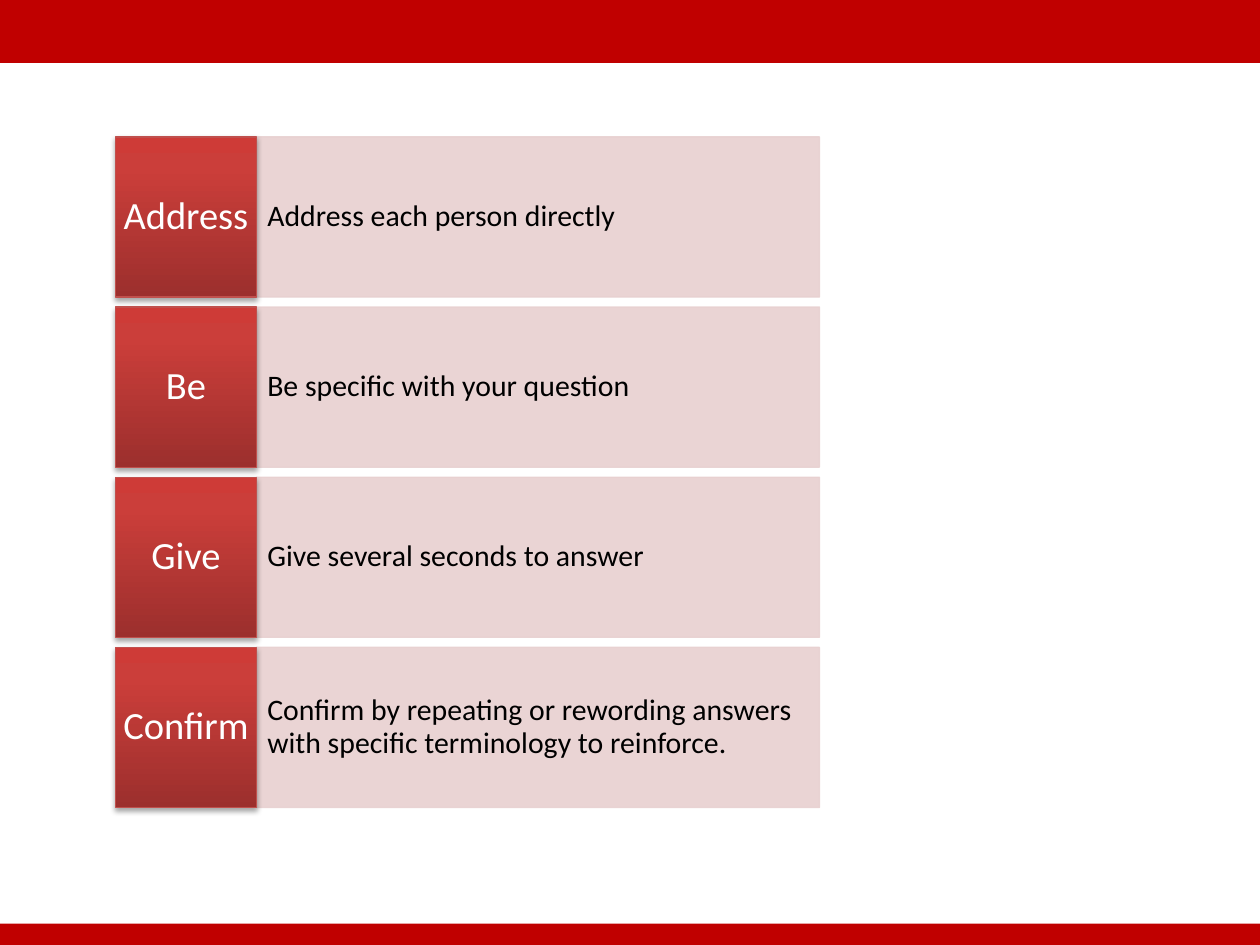
from lxml import etree
from pptx import Presentation, util as u
from pptx.dml.color import RGBColor
from pptx.enum import shapes, text
from pptx.oxml import ns

ROWS = [
    ("Address", "Address each person directly"),
    ("Be", "Be specific with your question"),
    ("Give", "Give several seconds to answer"),
    ("Confirm", "Confirm by repeating or rewording answers "
                "with specific terminology to reinforce."),
]
TOP, HIGH, STEP = 2.76, 3.23, 3.43
LEFT, TAG, WIDE = 2.33, 2.84, 11.35
STOPS = [(0, "9C2F2D"), (80, "CB3E3A"), (100, "CE3B37")]


def paint(color, code):
    color.rgb = RGBColor.from_string(code)


def node(parent, tag, **attrs):
    item = etree.SubElement(parent, ns.qn(tag))
    for key, value in attrs.items():
        item.set(key, str(value))
    return item


def add_rect(slide, left, top, width, height, fill, line=None):
    box = slide.shapes.add_shape(
        shapes.MSO_SHAPE.RECTANGLE,
        u.Cm(left), u.Cm(top), u.Cm(width), u.Cm(height))
    box.shadow.inherit = False
    box.fill.solid()
    paint(box.fill.fore_color, fill)
    if line:
        paint(box.line.color, line)
        box.line.width = u.Pt(0.75)
    else:
        box.line.fill.background()
    return box


def add_text(box, words, size, color, align, side, edge):
    frame = box.text_frame
    frame.word_wrap = True
    frame.vertical_anchor = text.MSO_ANCHOR.MIDDLE
    frame.margin_left = frame.margin_right = u.Cm(side)
    frame.margin_top = frame.margin_bottom = u.Cm(edge)
    para = frame.paragraphs[0]
    para.alignment = align
    para.line_spacing = 0.9
    run = para.add_run()
    run.text = words
    run.font.name = "Calibri"
    run.font.size = u.Pt(size)
    paint(run.font.color, color)


def set_alpha(box, share):
    for color in box._element.spPr.iter(ns.qn("a:srgbClr")):
        node(color, "a:alpha", val=share * 1000)


def set_blend(box):
    box.fill.gradient()
    box.fill.gradient_angle = 90
    stops = box._element.spPr.find(".//" + ns.qn("a:gsLst"))
    for old in list(stops):
        stops.remove(old)
    for place, code in STOPS:
        stop = node(stops, "a:gs", pos=place * 1000)
        node(stop, "a:srgbClr", val=code)


def set_shade(box):
    effects = box._element.spPr.find(ns.qn("a:effectLst"))
    shade = node(effects, "a:outerShdw", blurRad=u.Pt(3.1),
                 dist=u.Pt(1.8), dir=90 * 60000, rotWithShape=0)
    color = node(shade, "a:srgbClr", val="000000")
    node(color, "a:alpha", val=35000)


def add_row(slide, top, label, words):
    panel = add_rect(slide, LEFT + TAG, top, WIDE, HIGH, "E8D0D0", "E8D0D0")
    set_alpha(panel, 90)
    add_text(panel, words, size=17, color="000000",
             align=text.PP_ALIGN.LEFT, side=0.22, edge=0.81)
    tag = add_rect(slide, LEFT, top, TAG, HIGH, "CB3E3A", "C0504D")
    set_blend(tag)
    set_shade(tag)
    add_text(tag, label, size=22, color="FFFFFF",
             align=text.PP_ALIGN.CENTER, side=0.08, edge=0.33)


def main():
    deck = Presentation()
    deck.slide_width, deck.slide_height = u.Cm(25.4), u.Cm(19.05)
    slide = deck.slides.add_slide(deck.slide_layouts[6])
    add_rect(slide, 0, 0, 25.4, 1.27, "C00000")
    add_rect(slide, 0, 18.62, 25.4, 0.43, "C00000")
    for index, (label, words) in enumerate(ROWS):
        add_row(slide, TOP + index * STEP, label, words)
    deck.save("out.pptx")


if __name__ == "__main__":
    main()
